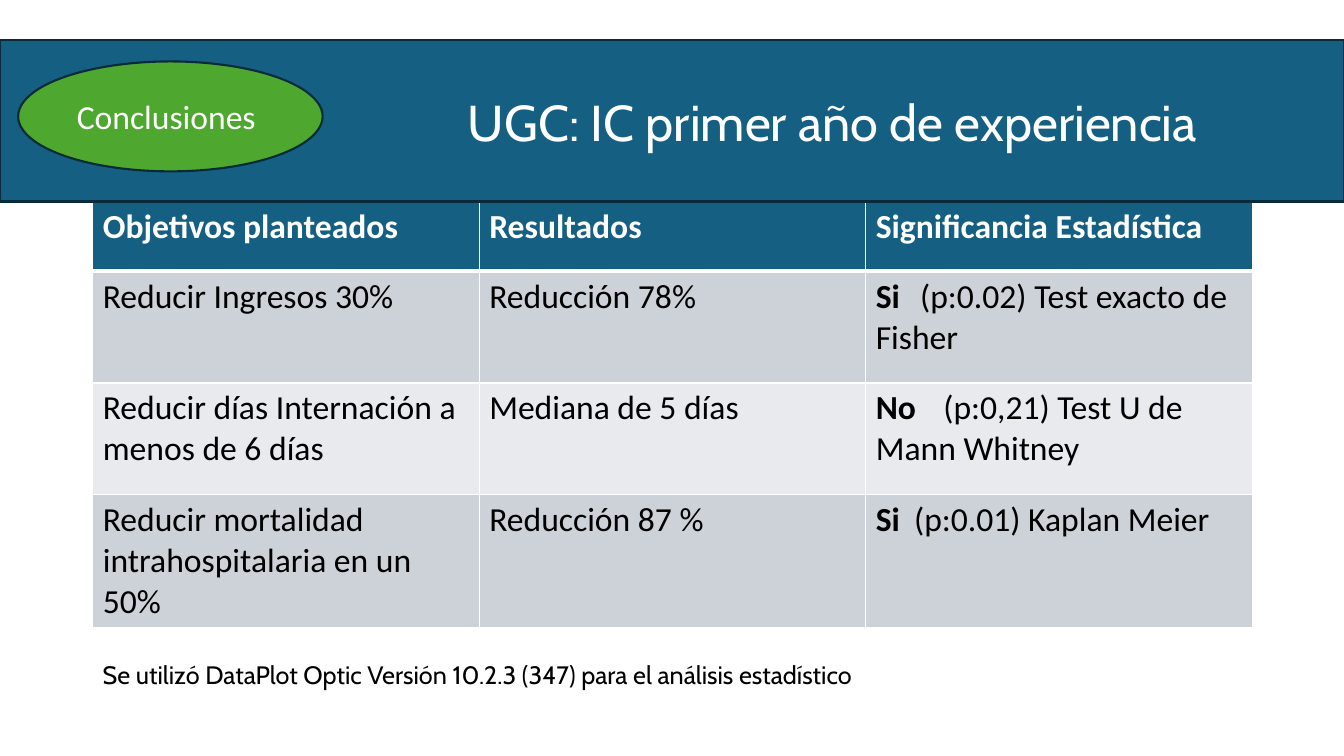
"""Build the conclusions slide of the first-year heart failure unit report."""
from lxml import etree
from pptx import Presentation
from pptx.dml.color import RGBColor
from pptx.enum.shapes import MSO_SHAPE
from pptx.enum.text import MSO_ANCHOR, PP_ALIGN
from pptx.oxml.ns import qn
from pptx.util import Inches, Pt

RECTANGLE, OVAL = MSO_SHAPE.RECTANGLE, MSO_SHAPE.OVAL
MIDDLE, CENTER = MSO_ANCHOR.MIDDLE, PP_ALIGN.CENTER

WHITE = RGBColor(0xFF, 0xFF, 0xFF)
BLACK = RGBColor(0x00, 0x00, 0x00)
BLUE = RGBColor(0x15, 0x60, 0x82)
NAVY = RGBColor(0x09, 0x2A, 0x39)
GREEN = RGBColor(0x4E, 0xA7, 0x2E)
GRAY = RGBColor(0xCC, 0xD2, 0xD8)
LIGHT_GRAY = RGBColor(0xE8, 0xEA, 0xED)

HEADERS = ["Objetivos planteados", "Resultados", "Significancia Estadística"]
GOALS = [
    ("Reducir Ingresos 30%", "Reducción 78%"),
    ("Reducir días Internación a menos de 6 días", "Mediana de 5 días"),
    ("Reducir mortalidad intrahospitalaria en un 50%", "Reducción 87 %"),
]
TESTS = [
    ("Si", 0.44, "(p:0.02) Test exacto de Fisher"),
    ("No", 0.67, "(p:0,21) Test U de Mann Whitney"),
    ("Si", 0.38, "(p:0.01) Kaplan Meier"),
]
ROW_HEIGHTS = [0.69, 1.11, 1.11, 1.11]


def format_run(r, font, size, color, bold=False):
    """Set the font of one run."""
    r.font.name = font
    r.font.size = Pt(size)
    r.font.color.rgb = color
    r.font.bold = bold


def add_label(slide, shape, box, fill, text, font, size, left=0.1, right=0.1):
    """Add an outlined shape with centred white text."""
    sp = slide.shapes.add_shape(shape, *map(Inches, box))
    sp.shadow.inherit = False
    sp.fill.solid()
    sp.fill.fore_color.rgb = fill
    sp.line.color.rgb = NAVY
    sp.line.width = Pt(1.5)
    tf = sp.text_frame
    tf.margin_left, tf.margin_right = Inches(left), Inches(right)
    tf.vertical_anchor = MIDDLE
    tf.text = text
    p = tf.paragraphs[0]
    p.alignment = CENTER
    format_run(p.runs[0], font, size, WHITE)


def add_note(slide, box, text):
    """Add the wrapped note under the table."""
    tf = slide.shapes.add_textbox(*map(Inches, box)).text_frame
    tf.word_wrap = True
    tf.text = text
    format_run(tf.paragraphs[0].runs[0], "Cabin", 18, BLACK)


def style_cell(cell, fill, top, bottom):
    """Give a cell white borders and a solid fill."""
    tcPr = cell._tc.get_or_add_tcPr()
    for side, width in (("L", 1), ("R", 1), ("T", top), ("B", bottom)):
        ln = etree.SubElement(tcPr, qn(f"a:ln{side}"), w=str(Pt(width)))
        solid = etree.SubElement(ln, qn("a:solidFill"))
        etree.SubElement(solid, qn("a:srgbClr"), val=str(WHITE))
    cell.fill.solid()
    cell.fill.fore_color.rgb = fill


def write_test(cell, verdict, tab, detail):
    """Write a bold verdict and, after a tab stop, its statistical test."""
    p = cell.text_frame.paragraphs[0]
    tabs = etree.SubElement(p._p.get_or_add_pPr(), qn("a:tabLst"))
    etree.SubElement(tabs, qn("a:tab"), pos=str(Inches(tab)), algn="l")
    for text, bold in ((verdict, True), (f"\t{detail}", False)):
        r = p.add_run()
        r.text = text
        format_run(r, "Calibri", 24, BLACK, bold)


def add_goal_table(slide):
    """Add the table of goals, results and significance."""
    table = slide.shapes.add_table(
        len(ROW_HEIGHTS), len(HEADERS), Inches(0.92), Inches(2),
        Inches(11.5), Inches(sum(ROW_HEIGHTS))).table
    for row, height in zip(table.rows, ROW_HEIGHTS):
        row.height = Inches(height)
    for i, texts in enumerate([HEADERS, *GOALS]):
        header = i == 0
        fill = BLUE if header else GRAY if i % 2 else LIGHT_GRAY
        for cell in table.rows[i].cells:
            style_cell(cell, fill, 3 if i == 1 else 1, 3 if header else 1)
        for j, text in enumerate(texts):
            cell = table.cell(i, j)
            cell.text = text
            format_run(cell.text_frame.paragraphs[0].runs[0], "Calibri", 24,
                       WHITE if header else BLACK, header)
    for i, test in enumerate(TESTS, 1):
        write_test(table.cell(i, 2), *test)


def main():
    """Build and save the slide."""
    prs = Presentation()
    prs.slide_width, prs.slide_height = Inches(13.33), Inches(7.5)
    s = prs.slides.add_slide(prs.slide_layouts[6])
    add_goal_table(s)
    add_label(s, RECTANGLE, (0, 0.4, 13.33, 1.6), BLUE,
              "UGC: IC primer año de experiencia", "Cabin", 36, left=3.28)
    add_label(s, OVAL, (0.18, 0.61, 3.02, 1.09), GREEN,
              "Conclusiones", "Calibri", 24, right=0.18)
    add_note(s, (0.92, 6.49, 11.5, 0.4),
             "Se utilizó DataPlot Optic Versión 10.2.3 (347) "
             "para el análisis estadístico")
    prs.save("out.pptx")


if __name__ == "__main__":
    main()
